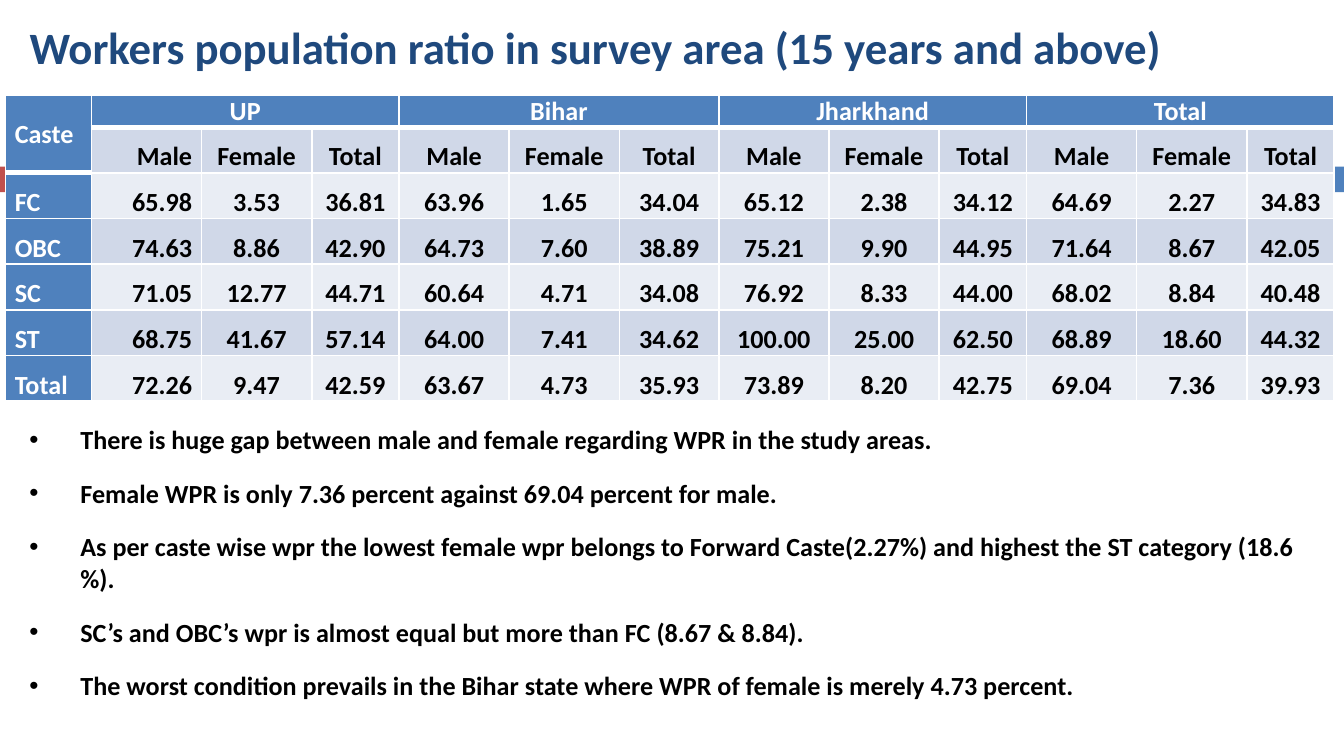
from dataclasses import dataclass

from lxml.etree import SubElement
from pptx import Presentation
from pptx.dml.color import RGBColor
from pptx.enum.shapes import MSO_SHAPE
from pptx.enum.text import MSO_ANCHOR, PP_ALIGN
from pptx.oxml.ns import qn
from pptx.slide import Slide
from pptx.table import Table, _Cell
from pptx.text.text import _Paragraph
from pptx.util import Inches, Pt

SLIDE_WIDTH = Inches(10)
SLIDE_HEIGHT = SLIDE_WIDTH * 9 // 16

WHITE, BLACK, BLUE, RED, NAVY = "FFFFFF", "000000", "4F81BD", "C0504D", "1F497D"
BANDS = ("E9EDF4", "D0D8E8")
FONT = {"name": "Calibri", "bold": True}

TITLE = "Workers population ratio in survey area (15 years and above)"
STATES = ["UP", "Bihar", "Jharkhand", "Total"]
MEASURES = ["Male", "Female", "Total"]
RATIOS = {
    "FC": "65.98 3.53 36.81 63.96 1.65 34.04 65.12 2.38 34.12 64.69 2.27 34.83",
    "OBC": "74.63 8.86 42.90 64.73 7.60 38.89 75.21 9.90 44.95 71.64 8.67 42.05",
    "SC": "71.05 12.77 44.71 60.64 4.71 34.08 76.92 8.33 44.00 68.02 8.84 40.48",
    "ST": "68.75 41.67 57.14 64.00 7.41 34.62 100.00 25.00 62.50 68.89 18.60 44.32",
    "Total": "72.26 9.47 42.59 63.67 4.73 35.93 73.89 8.20 42.75 69.04 7.36 39.93",
}
COLUMN_WIDTHS = [0.64, 0.82, 0.82, 0.65, 0.82, 0.82, 0.74,
                 0.82, 0.82, 0.65, 0.82, 0.82, 0.65]
FINDINGS = [
    "There is huge gap between male and female regarding WPR in the study areas.",
    "Female WPR is only 7.36 percent against 69.04 percent for male.",
    "As per caste wise wpr the lowest female wpr belongs to Forward Caste(2.27%) "
    "and highest the ST category (18.6 %).",
    "SC’s and OBC’s wpr is almost equal but more than FC (8.67 & 8.84).",
    "The worst condition prevails in the Bihar state where WPR of female is merely "
    "4.73 percent.",
]


@dataclass
class Bar:
    left: float
    width: float
    color: str


BARS = [Bar(0, 0.58, RED), Bar(0.65, 9.35, BLUE)]


def rgb(color: str) -> RGBColor:
    return RGBColor.from_string(color)


def set_attributes(target: object, values: dict) -> None:
    for name, value in values.items():
        setattr(target, name, value)


def write(paragraph: _Paragraph, text: str, size: float, color: str) -> None:
    run = paragraph.add_run()
    run.text = text
    set_attributes(run.font, {**FONT, "size": Pt(size)})
    run.font.color.rgb = rgb(color)


def draw_bar(slide: Slide, bar: Bar) -> None:
    shape = slide.shapes.add_shape(MSO_SHAPE.RECTANGLE, Inches(bar.left), Inches(1.24),
                                   Inches(bar.width), Inches(0.19))
    shape.shadow.inherit = False
    shape.fill.solid()
    shape.fill.fore_color.rgb = rgb(bar.color)
    shape.line.fill.background()


def draw_title(slide: Slide) -> None:
    title = slide.shapes.title
    set_attributes(title, {"left": Inches(0.12), "top": Inches(0.14),
                           "width": Inches(9.8), "height": Inches(0.42)})
    title.text_frame.vertical_anchor = MSO_ANCHOR.MIDDLE
    paragraph = title.text_frame.paragraphs[0]
    paragraph.alignment = PP_ALIGN.LEFT
    write(paragraph, TITLE, 24, NAVY)


def is_header(row: int, column: int) -> bool:
    return row == 0 or (row == 1 and column == 0)


def set_borders(cell: _Cell, row: int, column: int) -> None:
    top = 3 if row > 0 and is_header(row - 1, column) else 1
    bottom = 3 if is_header(row, column) else 1
    properties = cell._tc.get_or_add_tcPr()
    for side, width in {"L": 1, "R": 1, "T": top, "B": bottom}.items():
        line = SubElement(properties, qn(f"a:ln{side}"), w=str(Pt(width)))
        fill = SubElement(line, qn("a:solidFill"))
        SubElement(fill, qn("a:srgbClr"), val=WHITE)


def format_cell(cell: _Cell, text: str, row: int, column: int) -> None:
    heading = row == 0 or column == 0
    set_borders(cell, row, column)
    cell.fill.solid()
    cell.fill.fore_color.rgb = rgb(BLUE if heading else BANDS[row % 2])
    set_attributes(cell, {
        "margin_left": Inches(0.07), "margin_right": Inches(0.07),
        "margin_top": 0, "margin_bottom": 0,
        "vertical_anchor": MSO_ANCHOR.MIDDLE if row == 0 else MSO_ANCHOR.BOTTOM,
    })
    paragraph = cell.text_frame.paragraphs[0]
    paragraph.font.size = Pt(14)
    if column == 0:
        paragraph.alignment = PP_ALIGN.LEFT
    elif column == 1 and row > 0:
        paragraph.alignment = PP_ALIGN.RIGHT
    else:
        paragraph.alignment = PP_ALIGN.CENTER
    if text:
        write(paragraph, text, 14, WHITE if heading else BLACK)


def merge_headings(table: Table) -> None:
    table.cell(0, 0).merge(table.cell(1, 0))
    span = len(MEASURES)
    for first in range(1, len(COLUMN_WIDTHS), span):
        table.cell(0, first).merge(table.cell(0, first + span - 1))


def draw_table(slide: Slide) -> None:
    state_row = ["Caste"]
    for state in STATES:
        state_row += [state, "", ""]
    rows = [state_row, [""] + MEASURES * len(STATES)]
    rows += [[caste, *ratios.split()] for caste, ratios in RATIOS.items()]
    heights = [0.18] + [0.34] * (len(rows) - 1)

    frame = slide.shapes.add_table(len(rows), len(COLUMN_WIDTHS), Inches(0.04), Inches(0.71),
                                   Inches(sum(COLUMN_WIDTHS)), Inches(sum(heights)))
    table = frame.table
    for column, width in zip(table.columns, COLUMN_WIDTHS):
        column.width = Inches(width)
    for row, height in zip(table.rows, heights):
        row.height = Inches(height)
    merge_headings(table)
    for row, texts in enumerate(rows):
        for column, text in enumerate(texts):
            format_cell(table.cell(row, column), text, row, column)


def draw_findings(slide: Slide) -> None:
    box = slide.shapes.add_textbox(Inches(0.12), Inches(3.1), Inches(9.8), Inches(2.19))
    frame = box.text_frame
    frame.word_wrap = True
    for index, finding in enumerate(FINDINGS):
        paragraph = frame.add_paragraph() if index else frame.paragraphs[0]
        set_attributes(paragraph, {"space_before": Pt(6), "space_after": Pt(6)})
        properties = paragraph._p.get_or_add_pPr()
        properties.set("marL", str(Inches(0.38)))
        properties.set("indent", str(Inches(-0.38)))
        SubElement(properties, qn("a:buFont"), typeface="Arial")
        SubElement(properties, qn("a:buChar"), char="•")
        write(paragraph, finding, 14, BLACK)


def main() -> None:
    presentation = Presentation()
    set_attributes(presentation, {"slide_width": SLIDE_WIDTH, "slide_height": SLIDE_HEIGHT})
    slide = presentation.slides.add_slide(presentation.slide_layouts[5])

    # Decorative band behind the table
    for bar in BARS:
        draw_bar(slide, bar)

    # Title, ratios by caste and state, and findings
    draw_title(slide)
    draw_table(slide)
    draw_findings(slide)

    presentation.save("out.pptx")


if __name__ == "__main__":
    main()
